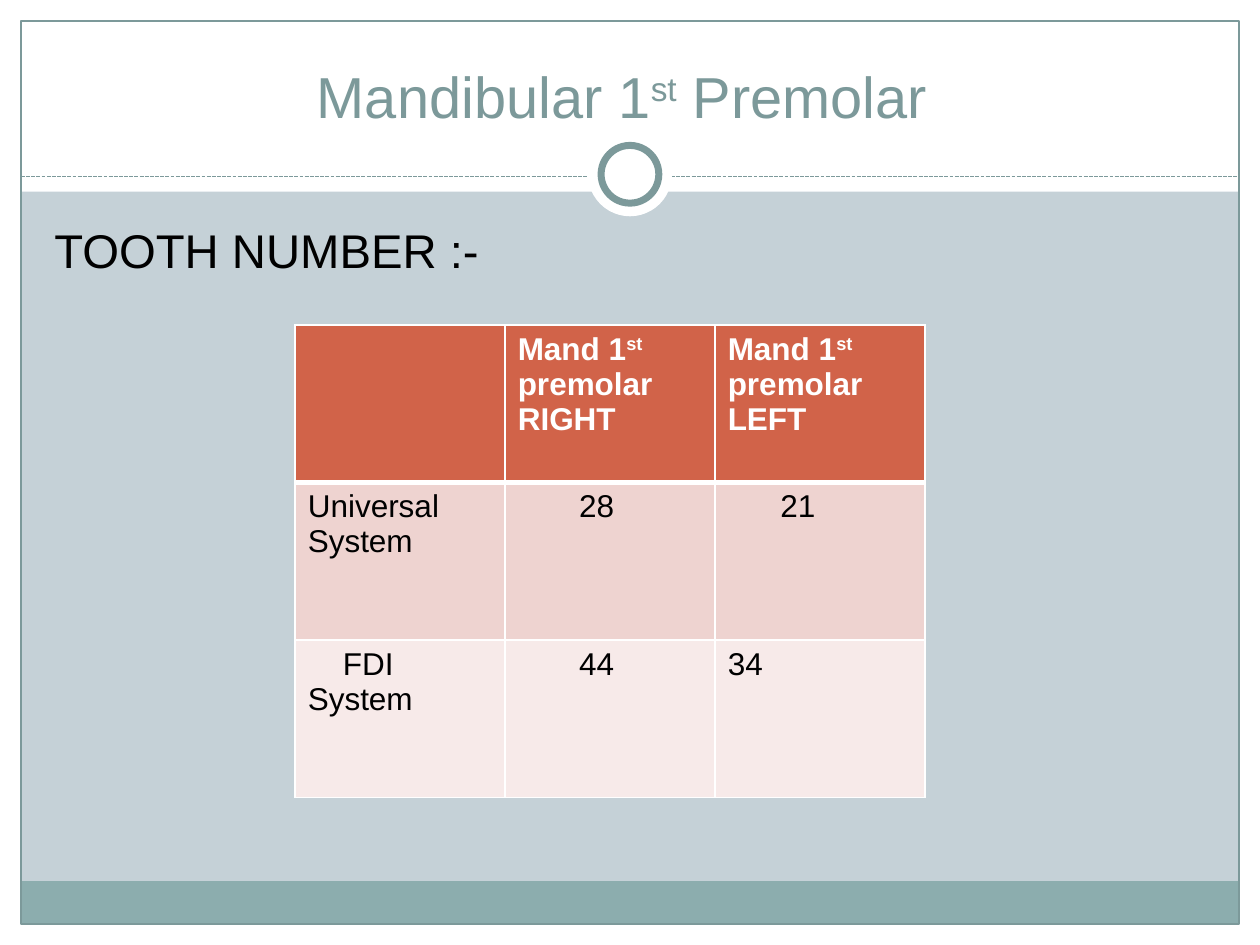
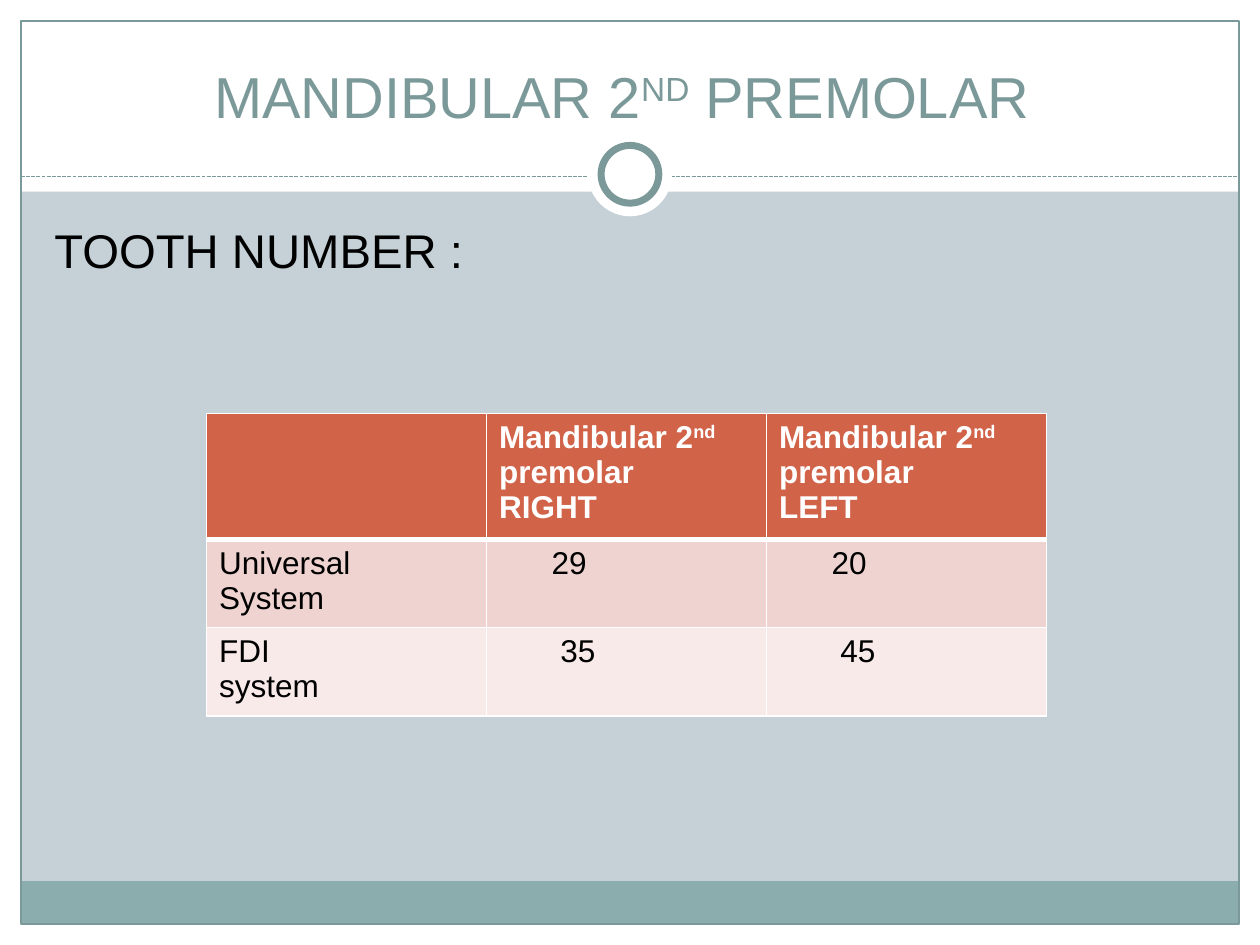
from lxml import etree
from pptx import Presentation
from pptx.dml.color import RGBColor
from pptx.enum import dml, shapes, text
from pptx.oxml.ns import qn
from pptx.util import Pt

WIDE, HIGH = 720, 540
EDGE = 12
HEAD = 109.5
FOOT = 24.5
FONT = "Arial"
WHITE, BLACK = "FFFFFF", "000000"
PALE, TEAL, SEA = "C5D1D7", "7C999A", "8CADAE"
RUST = "D16349"
ROWS = [RUST, "EED3D0", "F7EAE9"]


def tint(code):
    return RGBColor.from_string(code)


def write(frame, words, size=18, color=BLACK, bold=False, lead=0,
          align=text.PP_ALIGN.LEFT):
    """Fill a text frame; ^marks^ raise a run, lead indents the first line."""
    frame.word_wrap = True
    for i, line in enumerate(words.split("\n")):
        para = frame.paragraphs[0] if i == 0 else frame.add_paragraph()
        para.alignment = align
        if lead:
            para._p.get_or_add_pPr().set("indent", str(Pt(lead)))
        for j, part in enumerate(line.split("^")):
            run = para.add_run()
            run.text = part
            font = run.font
            font.name, font.size, font.bold = FONT, Pt(size), bold
            font.color.rgb = tint(color)
            if j % 2:
                run._r.get_or_add_rPr().set("baseline", "30000")


def shape(slide, kind, box, fill=None, line=None, width=0.75):
    item = slide.shapes.add_shape(kind, *map(Pt, box))
    item.shadow.inherit = False
    if fill:
        item.fill.solid()
        item.fill.fore_color.rgb = tint(fill)
    else:
        item.fill.background()
    if line:
        item.line.color.rgb = tint(line)
        item.line.width = Pt(width)
    else:
        item.line.fill.background()


def rule(slide, left, right, top):
    line = slide.shapes.add_connector(
        shapes.MSO_CONNECTOR.STRAIGHT, Pt(left), Pt(top), Pt(right), Pt(top))
    line.line.color.rgb = tint(TEAL)
    line.line.width = Pt(0.75)
    line.line.dash_style = dml.MSO_LINE.SQUARE_DOT
    etree.SubElement(line._element.spPr, qn("a:effectLst"))


def ring(slide, mid, top):
    """Draw a white disc and a teal ring around one centre."""
    for size, line in ((48, None), (33, TEAL)):
        box = (mid - size / 2, top - size / 2, size, size)
        shape(slide, shapes.MSO_SHAPE.OVAL, box, WHITE, line, 4)


def backdrop(slide):
    slide.background.fill.solid()
    slide.background.fill.fore_color.rgb = tint(PALE)
    rect = shapes.MSO_SHAPE.RECTANGLE
    base, span = HIGH - EDGE, WIDE - 2 * EDGE
    for box in ((0, base, WIDE, EDGE), (0, 0, WIDE, HEAD),
                (0, 0, EDGE, HIGH), (WIDE - EDGE, 0, EDGE, HIGH)):
        shape(slide, rect, box, WHITE)
    shape(slide, rect, (EDGE, base - FOOT, span, FOOT), SEA)
    shape(slide, rect, (EDGE, EDGE, span, HIGH - 2 * EDGE), line=TEAL)
    rule(slide, EDGE, WIDE - EDGE, 100.8)
    ring(slide, WIDE / 2, 99.6)


def title(slide, box, words):
    frame = slide.shapes.add_textbox(*map(Pt, box)).text_frame
    frame.vertical_anchor = text.MSO_ANCHOR.BOTTOM
    write(frame, words, size=33, color=TEAL, align=text.PP_ALIGN.CENTER)


def body(slide, box, words):
    frame = slide.shapes.add_textbox(*map(Pt, box)).text_frame
    frame.margin_top = Pt(6.5)
    write(frame, words, size=27)


def border(cell, row):
    """Draw white cell edges, thick between header and first row."""
    props = cell._tc.get_or_add_tcPr()
    for side in "LRTB":
        thick = (row, side) in ((0, "B"), (1, "T"))
        edge = etree.SubElement(props, qn("a:ln" + side),
                                w=str(Pt(3 if thick else 1)))
        fill = etree.SubElement(edge, qn("a:solidFill"))
        etree.SubElement(fill, qn("a:srgbClr"), val=WHITE)


def chart(slide, left, top, width, highs, cells):
    """Place the tooth table; each cell is (words, lead)."""
    count = len(cells[0])
    grid = slide.shapes.add_table(
        len(cells), count, Pt(left), Pt(top), Pt(width), Pt(sum(highs))).table
    for col in grid.columns:
        col.width = Pt(width / count)
    for r, line in enumerate(cells):
        grid.rows[r].height = Pt(highs[r])
        for c, (words, lead) in enumerate(line):
            cell = grid.cell(r, c)
            border(cell, r)
            cell.fill.solid()
            cell.fill.fore_color.rgb = tint(ROWS[r])
            if words:
                write(cell.text_frame, words, lead=lead, bold=r == 0,
                      color=BLACK if r else WHITE)


def tooth(deck, name, label, place, head, rows):
    slide = deck.slides.add_slide(deck.slide_layouts[6])
    backdrop(slide)
    title(slide, (24, 18, 672, 60), name)
    body(slide, (24, 120, 670, 360), label)
    top = [("", 0)] + [(f"{head} premolar\n{side}", 0)
                       for side in ("RIGHT", "LEFT")]
    chart(slide, *place, [top] + rows)


def main():
    deck = Presentation()
    deck.slide_width, deck.slide_height = Pt(WIDE), Pt(HIGH)
    tooth(deck, "Mandibular 1^st^ Premolar ", "TOOTH NUMBER :-",
          (168.7, 185.8, 360, [90, 90, 90]), "Mand 1^st^",
          [[("Universal System", 0), ("28", 35), ("21", 30)],
           [("FDI System", 20), ("44", 35), ("34", 0)]])
    tooth(deck, "MANDIBULAR 2^ND^ PREMOLAR ", "TOOTH NUMBER :",
          (118, 236.2, 480, [67.5, 47.5, 47.5]), "Mandibular 2^nd^",
          [[("Universal\nSystem", 0), ("29", 30), ("20", 30)],
           [("FDI\nsystem", 0), ("35", 35), ("45", 35)]])
    deck.save("out.pptx")


if __name__ == "__main__":
    main()
